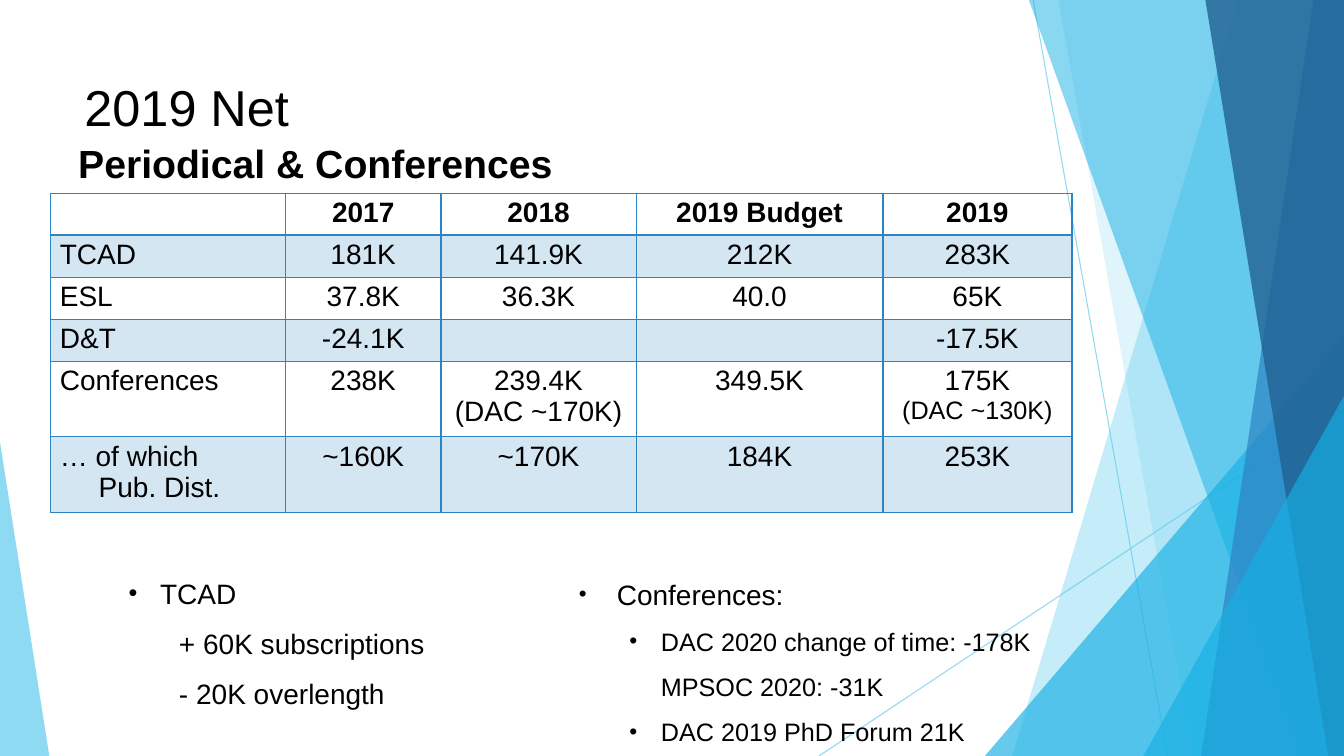
from dataclasses import dataclass

from lxml.etree import SubElement
from pptx import Presentation
from pptx.dml.color import RGBColor
from pptx.enum.shapes import MSO_CONNECTOR as Connector, MSO_SHAPE as Shape
from pptx.enum.text import MSO_ANCHOR as Anchor, PP_ALIGN as Align
from pptx.oxml.ns import qn
from pptx.util import Pt


@dataclass(frozen=True)
class Theme:
    font: str = "Arial"
    ink: str = "000000"
    sky: str = "5FCBEF"
    cyan: str = "17B0E4"
    blue: str = "2E83C3"
    navy: str = "226292"
    title: int = 36
    heading: int = 28
    body: int = 20
    small: int = 18
    scale: int = 9525


@dataclass
class Line:
    runs: list
    level: int = 0
    left: int = 0
    hang: int = 0
    bullet: int = 0
    spacing: float = 1.0
    align: Align = Align.LEFT


class Painter:
    """Draws styled elements on one page, with lengths in px."""

    def __init__(self, page, theme):
        self.page = page
        self.theme = theme

    def px(self, *lengths):
        return [length * self.theme.scale for length in lengths]

    def fade(self, element, percent):
        for color in element.iter(qn("a:srgbClr")):
            SubElement(color, qn("a:alpha"), val=str(percent * 1000))

    def paint(self, shape, color, opacity):
        shape.shadow.inherit = False
        shape.fill.solid()
        shape.fill.fore_color.rgb = RGBColor.from_string(color)
        shape.line.fill.background()
        self.fade(shape.element.spPr, opacity)

    def ray(self, start, end):
        ray = self.page.shapes.add_connector(
            Connector.STRAIGHT, *self.px(*start, *end))
        ray.line.color.rgb = RGBColor.from_string(self.theme.sky)
        ray.line.width = Pt(0.75)
        self.fade(ray.element.spPr, 70)
        SubElement(ray.element.spPr, qn("a:effectLst"))

    def band(self, top, bottom, edge, color, opacity):
        outline = self.page.shapes.build_freeform(top, 0, self.theme.scale)
        outline.add_line_segments([(edge, 0), (edge, 720), (bottom, 720)])
        self.paint(outline.convert_to_shape(), color, opacity)

    def corner(self, box, apex, color, opacity):
        shape = self.page.shapes.add_shape(Shape.ISOSCELES_TRIANGLE, *self.px(*box))
        shape.adjustments[0] = apex
        self.paint(shape, color, opacity)

    def typeset(self, frame, lines, bold=False):
        for index, line in enumerate(lines):
            para = frame.add_paragraph() if index else frame.paragraphs[0]
            para.alignment = line.align
            para.level = line.level
            para.line_spacing = line.spacing
            props = para._p.get_or_add_pPr()
            props.set("marL", str(line.left * self.theme.scale))
            props.set("indent", str(-line.hang * self.theme.scale))
            if line.bullet:
                SubElement(props, qn("a:buSzPct"), val=str(line.bullet * 1000))
                SubElement(props, qn("a:buFont"), typeface=self.theme.font)
                SubElement(props, qn("a:buChar"), char="•")
            for order, (text, size) in enumerate(line.runs):
                if order:
                    para.add_line_break()
                span = para.add_run()
                span.text = text
                span.font.name = self.theme.font
                span.font.size = Pt(size)
                span.font.bold = bold
                span.font.color.rgb = RGBColor.from_string(self.theme.ink)

    def text(self, box, lines, bold=False, anchor=Anchor.TOP, wrap=True):
        frame = self.page.shapes.add_textbox(*self.px(*box)).text_frame
        frame.word_wrap = wrap
        frame.vertical_anchor = anchor
        self.typeset(frame, lines, bold)

    def border(self, cell, bottom):
        props = cell._tc.get_or_add_tcPr()
        for side, width in zip("LRTB", (1, 1, 1, bottom)):
            edge = SubElement(props, qn(f"a:ln{side}"), w=str(Pt(width)))
            fill = SubElement(edge, qn("a:solidFill"))
            SubElement(fill, qn("a:srgbClr"), val=self.theme.blue)

    def table(self, left, top, widths, heights, rows):
        box = self.px(left, top, sum(widths), sum(heights))
        grid = self.page.shapes.add_table(len(rows), len(widths), *box).table
        grid.first_row = grid.horz_banding = False
        for column, width in zip(grid.columns, self.px(*widths)):
            column.width = width
        for r, (height, row) in enumerate(zip(self.px(*heights), rows)):
            grid.rows[r].height = height
            for c, lines in enumerate(row):
                cell = grid.cell(r, c)
                cell.margin_left, cell.margin_right = self.px(9, 9)
                cell.margin_top, cell.margin_bottom = self.px(4, 4)
                self.border(cell, 1 if r else 2)
                if r % 2:
                    cell.fill.solid()
                    cell.fill.fore_color.rgb = RGBColor.from_string(self.theme.blue)
                    self.fade(cell._tc.tcPr.find(qn("a:solidFill")), 20)
                else:
                    cell.fill.background()
                self.typeset(cell.text_frame, lines, bold=r == 0)


def backdrop(painter, theme):
    painter.ray((984, 0), (1112, 720))
    painter.ray((1280, 387), (780, 720))
    painter.band(1179, 964, 1280, theme.sky, 36)
    painter.band(1008, 1136, 1280, theme.sky, 20)
    painter.corner((938, 320, 342, 400), 1, theme.cyan, 66)
    painter.band(980, 1239, 1280, theme.cyan, 50)
    painter.band(1251, 1144, 1280, theme.blue, 70)
    painter.band(1148, 1265, 1280, theme.navy, 80)
    painter.corner((1089, 377, 191, 343), 1, theme.cyan, 66)
    painter.corner((0, 421, 47, 299), 0, theme.sky, 70)


def net_rows(theme):
    def label(text, left=0):
        return Line([(text, theme.body)] if text else [], left=left)

    def figure(text, note="", size=theme.body):
        runs = [(text, theme.body)] if text else []
        if note:
            runs.append((note, size))
        return [Line(runs, align=Align.CENTER)]

    values = [
        ("", "2017", "2018", "2019 Budget", "2019"),
        ("TCAD", "181K", "141.9K", "212K", "283K"),
        ("ESL", "37.8K", "36.3K", "40.0", "65K"),
        ("D&T", "-24.1K", "", "", "-17.5K"),
        ("Conferences", "238K", "239.4K", "349.5K", "175K"),
        ("… of which", "~160K", "~170K", "184K", "253K"),
    ]
    rows = [[[label(name)], *map(figure, amounts)] for name, *amounts in values]
    rows[4][2] = figure("239.4K", "(DAC ~170K)")
    rows[4][4] = figure("175K", "(DAC ~130K)", theme.small)
    rows[5][0].append(label("Pub. Dist.", 37))
    return rows


def main():
    theme = Theme()
    deck = Presentation()
    deck.slide_width, deck.slide_height = 1280 * theme.scale, 720 * theme.scale
    painter = Painter(deck.slides.add_slide(deck.slide_layouts[6]), theme)
    backdrop(painter, theme)
    painter.text((71, 64, 973, 75), [Line([("2019 Net", theme.title)])],
                 anchor=Anchor.MIDDLE)
    painter.table(48, 184, (224, 148, 186, 235, 180), (39, 39, 40, 39, 70, 69),
                  net_rows(theme))

    def item(*texts, size=theme.small, level=1, left=78, hang=30, bullet=90):
        return Line([(text, size) for text in texts], level, left, hang, bullet, 1.5)

    def detail(text):
        return item(text, size=theme.body, level=2, left=96, hang=0, bullet=0)

    painter.text((65, 528, 516, 180), [
        item("TCAD", size=theme.body),
        detail("+ 60K subscriptions"),
        detail("- 20K overlength"),
    ])
    painter.text((542, 529, 551, 180), [
        item("Conferences:", size=theme.body, level=0, left=36, hang=36, bullet=80),
        item("DAC 2020 change of time: -178K", "MPSOC 2020: -31K"),
        item("DAC 2019 PhD Forum 21K"),
    ])
    painter.text((65, 128, 477, 55),
                 [Line([("Periodical & Conferences", theme.heading)])],
                 bold=True, wrap=False)
    deck.save("out.pptx")


if __name__ == "__main__":
    main()
